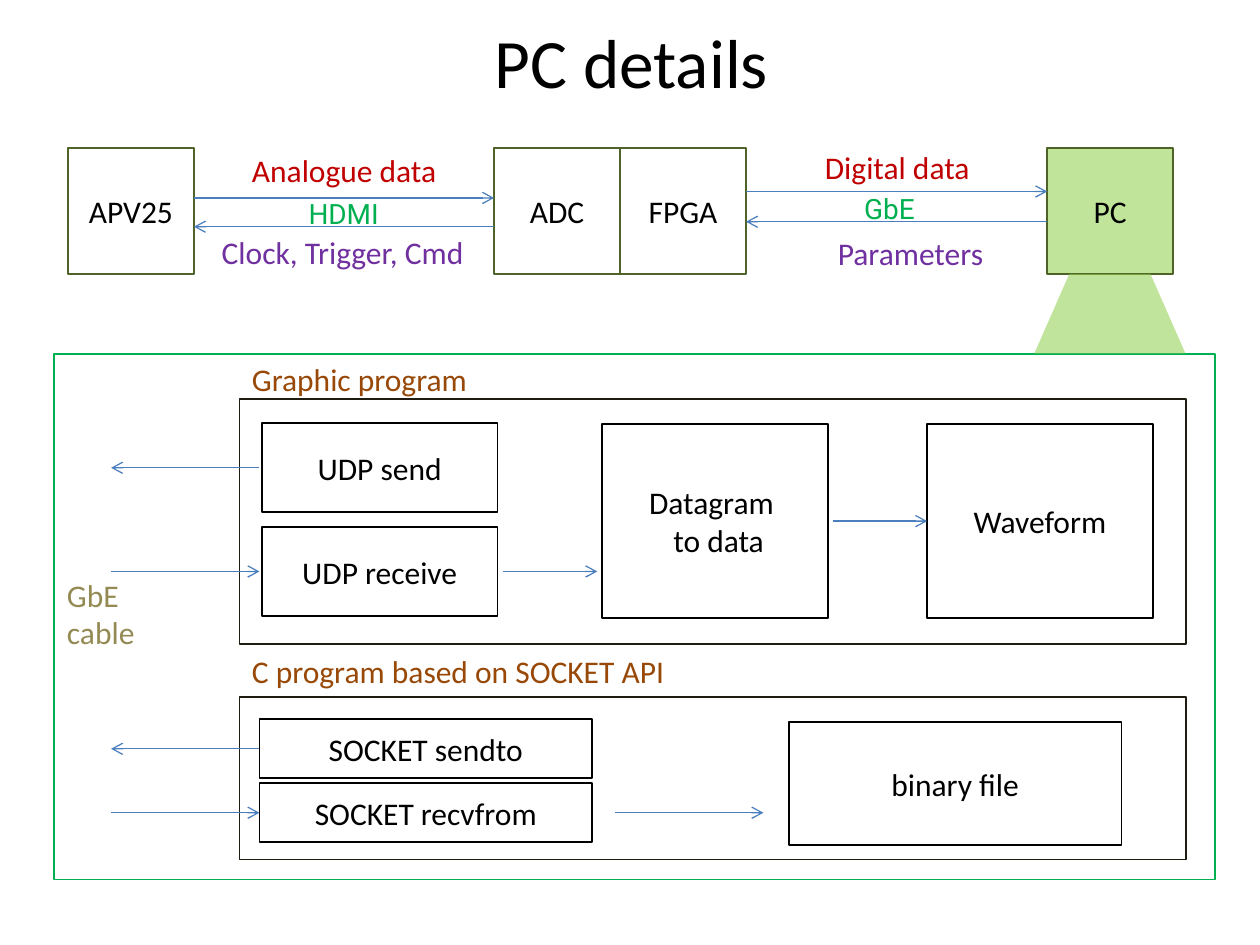
"""Build the PC details slide: readout chain above, PC programs below."""
import lxml.etree
import pptx
import pptx.dml.color
import pptx.enum.shapes
import pptx.enum.text
import pptx.oxml.ns
import pptx.util

Cm, Pt = pptx.util.Cm, pptx.util.Pt
Kind = pptx.enum.shapes.MSO_SHAPE
Wire = pptx.enum.shapes.MSO_CONNECTOR
Align = pptx.enum.text.PP_ALIGN
Mid = pptx.enum.text.MSO_ANCHOR.MIDDLE
qn = pptx.oxml.ns.qn

THEME = {
    "ink": "000000", "olive": "4F6228", "lime": "92D050", "green": "00B050",
    "dark": "1E1C11", "blue": "4B7EBC", "red": "C00000", "violet": "7030A0",
    "brown": "984807", "tan": "948A54",
    "face": "Calibri", "alt": "Roboto",
    "title": 39.6, "body": 18, "small": 16, "edge": 1, "wire": 0.75,
}

TITLE = ("PC details", 1.3, 0.33, 22.86, 1.8)
SIDE, TOP = 2.54, 2.98
CHAIN = [("APV25", 1.37, None), ("ADC", 9.96, None), ("FPGA", 12.5, None), ("PC", 21.11, 57)]
LINKS = [("APV25", "ADC", 3.99, 4.57), ("FPGA", "PC", 3.86, 4.47)]

FRAME = (1.09, 7.13, 23.4, 10.6)
BEAM = (20.85, TOP + SIDE, 3.05, FRAME[1] - TOP - SIDE)
PANELS = [(4.83, 8.05, 19.08, 4.93), (4.83, 14.05, 19.08, 3.28)]
BLOCKS = {
    "UDP send": (5.28, 8.53, 4.75, 1.8),
    "UDP receive": (5.28, 10.62, 4.75, 1.8),
    "Datagram \n to data": (12.14, 8.55, 4.55, 3.91),
    "Waveform": (18.69, 8.55, 4.55, 3.91),
    "SOCKET sendto": (5.23, 14.5, 6.71, 1.19),
    "SOCKET recvfrom": (5.23, 15.79, 6.71, 1.19),
    "binary file": (15.9, 14.55, 6.71, 2.49),
}
CABLE = (2.24, 5.23)
FLOWS = [
    ("UDP send", *CABLE[::-1]), ("UDP receive", *CABLE),
    ("SOCKET sendto", *CABLE[::-1]), ("SOCKET recvfrom", *CABLE),
    ("UDP receive", 10.13, 12.04), ("Waveform", 16.79, 18.69),
    ("SOCKET recvfrom", 12.4, 15.39),
]
LABELS = [
    ("Analogue data", 4.83, 2.92, 4.27, "red"),
    ("Clock, Trigger, Cmd", 4.22, 4.57, 5.44, "violet"),
    ("Digital data", 16.38, 2.85, 3.45, "red"),
    ("Parameters", 16.64, 4.6, 3.48, "violet"),
    ("Graphic program", 4.83, 7.14, 5.21, "brown"),
    ("C program based on SOCKET API", 4.83, 13.02, 8.92, "brown"),
    ("GbE\ncable", 1.1, 11.48, 2.79, "tan"),
]
MEDIA = [("GbE", 17.17, 3.73, 1.52, "green"), ("HDMI", 5.97, 3.84, 1.93, "green")]

deck = pptx.Presentation()
deck.slide_width, deck.slide_height = Cm(25.4), Cm(19.05)
slide = deck.slides.add_slide(deck.slide_layouts[6])


def tint(name):
    return pptx.dml.color.RGBColor.from_string(THEME[name])


def apply(thing, form):
    for key, val in form.items():
        setattr(thing, key, val)


def write(shape, text, hue="ink", size="body", face="face", align=Align.CENTER, **form):
    frame = shape.text_frame
    frame.text = text
    apply(frame, {"word_wrap": True, "vertical_anchor": Mid, **form})
    for para in frame.paragraphs:
        para.alignment = align
        apply(para.font, {"size": Pt(THEME[size]), "name": THEME[face]})
        para.font.color.rgb = tint(hue)


def draw(area, edge=None, text="", alpha=None, kind=Kind.RECTANGLE):
    shape = slide.shapes.add_shape(kind, *map(Cm, area))
    shape.shadow.inherit = False
    if alpha:
        shape.fill.solid()
        shape.fill.fore_color.rgb = tint("lime")
        mark = shape.fill._xPr.find(".//" + qn("a:srgbClr"))
        lxml.etree.SubElement(mark, qn("a:alpha"), val=str(alpha * 1000))
    else:
        shape.fill.background()
    if edge:
        shape.line.color.rgb = tint(edge)
        shape.line.width = Pt(THEME["edge"])
    else:
        shape.line.fill.background()
    if text:
        write(shape, text)
    return shape


def wire(start, end, y):
    line = slide.shapes.add_connector(Wire.STRAIGHT, Cm(start), Cm(y), Cm(end), Cm(y))
    line.line.color.rgb = tint("blue")
    line.line.width = Pt(THEME["wire"])
    lxml.etree.SubElement(line.line._get_or_add_ln(), qn("a:tailEnd"), type="arrow")
    lxml.etree.SubElement(line._element.spPr, qn("a:effectLst"))


def label(text, x, y, wide, hue, **form):
    box = slide.shapes.add_textbox(*map(Cm, (x, y, wide, 1.02)))
    look = {"align": Align.LEFT, "word_wrap": False,
            "vertical_anchor": pptx.enum.text.MSO_ANCHOR.TOP}
    write(box, text, hue, **look, **form)


def main():
    head = slide.shapes.add_textbox(*map(Cm, TITLE[1:]))
    write(head, TITLE[0], size="title")

    for name, x, alpha in CHAIN:
        draw((x, TOP, SIDE, SIDE), "olive", name, alpha)
    left = {name: x for name, x, _ in CHAIN}
    for near, far, there, back in LINKS:
        wire(left[near] + SIDE, left[far], there)
        wire(left[far], left[near] + SIDE, back)

    draw(FRAME, "green")
    draw(BEAM, alpha=56, kind=Kind.TRAPEZOID).adjustments[0] = 0.44
    for area in PANELS:
        draw(area, "dark")
    for text, area in BLOCKS.items():
        draw(area, "ink", text)
    for name, start, end in FLOWS:
        _, y, _, high = BLOCKS[name]
        wire(start, end, y + high / 2)

    for item in LABELS:
        label(*item)
    for item in MEDIA:
        label(*item, size="small", face="alt")
    deck.save("out.pptx")


if __name__ == "__main__":
    main()
